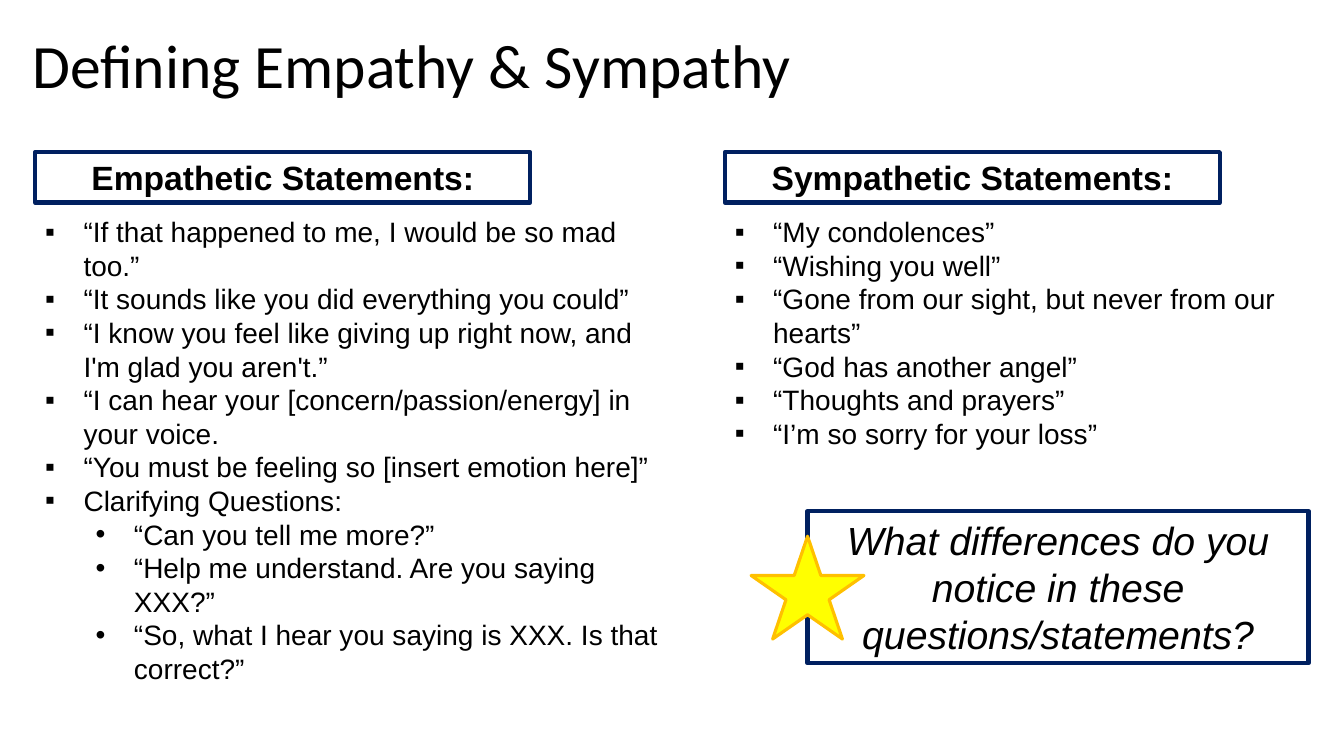
from pptx import Presentation
from pptx.dml.color import RGBColor as Rgb
from pptx.enum.shapes import MSO_SHAPE as Form
from pptx.enum.text import MSO_ANCHOR as Anchor, PP_ALIGN as Align
from pptx.util import Inches, Pt
from lxml.etree import SubElement
from pptx.oxml.ns import qn

BLACK = Rgb(0, 0, 0)
WHITE = Rgb(255, 255, 255)
NAVY = Rgb(0, 32, 96)
YELLOW = Rgb(255, 255, 0)
GOLD = Rgb(255, 192, 0)

LEFT, RIGHT = 2.63, 53.94
HEAD_TOP, LIST_TOP = 20.13, 27.73

EMPATHY = [
    (0, "“If that happened to me, I would be so mad too.”"),
    (0, "“It sounds like you did everything you could”"),
    (0, "“I know you feel like giving up right now, and I'm glad you aren't.”"),
    (0, "“I can hear your [concern/passion/energy] in your voice."),
    (0, "“You must be feeling so [insert emotion here]”"),
    (0, "Clarifying Questions:"),
    (1, "“Can you tell me more?”"),
    (1, "“Help me understand. Are you saying XXX?”"),
    (1, "“So, what I hear you saying is XXX. Is that correct?”"),
]
SYMPATHY = [
    (0, "“My condolences”"),
    (0, "“Wishing you well”"),
    (0, "“Gone from our sight, but never from our hearts”"),
    (0, "“God has another angel”"),
    (0, "“Thoughts and prayers”"),
    (0, "“I’m so sorry for your loss”"),
]


class Board:
    font = "Arial"

    def __init__(self, deck):
        self.wide, self.high = deck.slide_width, deck.slide_height
        self.shapes = deck.slides.add_slide(deck.slide_layouts[6]).shapes

    def place(self, x, y, w, h):
        return (round(self.wide * x / 100), round(self.high * y / 100),
                round(self.wide * w / 100), round(self.high * h / 100))

    def say(self, para, text, size, bold=False, slant=False, font=None):
        run = para.add_run()
        run.text = text
        face = run.font
        face.name, face.size = font or self.font, Pt(size)
        face.bold, face.italic = bold, slant
        face.color.rgb = BLACK

    def title(self, text, *area):
        box = self.shapes.add_textbox(*self.place(*area))
        box.fill.solid()
        box.fill.fore_color.rgb = WHITE
        frame = box.text_frame
        frame.word_wrap = True
        frame.vertical_anchor = Anchor.MIDDLE
        para = frame.paragraphs[0]
        para.line_spacing = 0.9
        self.say(para, text, 44, font="Calibri")

    def shape(self, form, area, line, width, fill=None):
        item = self.shapes.add_shape(form, *self.place(*area))
        item.shadow.inherit = False
        item.line.color.rgb, item.line.width = line, Pt(width)
        if fill is None:
            item.fill.background()
        else:
            item.fill.solid()
            item.fill.fore_color.rgb = fill
        return item

    def panel(self, text, *area, **style):
        frame = self.shape(Form.RECTANGLE, area, NAVY, 3).text_frame
        frame.word_wrap = True
        frame.vertical_anchor = Anchor.TOP
        para = frame.paragraphs[0]
        para.alignment = Align.CENTER
        self.say(para, text, **style)

    def star(self, *area):
        self.shape(Form.STAR_5_POINT, area, GOLD, 2.25, YELLOW)

    def bullets(self, items, *area):
        frame = self.shapes.add_textbox(*self.place(*area)).text_frame
        frame.word_wrap = True
        for spot, (level, text) in enumerate(items):
            para = frame.add_paragraph() if spot else frame.paragraphs[0]
            para.level = level
            props = para._p.get_or_add_pPr()
            props.set("marL", str(Inches(0.38 + 0.5 * level)))
            props.set("indent", str(Inches(-0.38)))
            SubElement(props, qn("a:buFont")).set("typeface", self.font)
            SubElement(props, qn("a:buChar")).set("char", "▪•"[level])
            self.say(para, text, 20)


def main():
    deck = Presentation()
    deck.slide_width, deck.slide_height = Inches(13.33), Inches(7.5)
    board = Board(deck)
    board.bullets(EMPATHY, LEFT, LIST_TOP, 47.41, 64.13)
    for x, name in ((LEFT, "Empathetic"), (RIGHT, "Sympathetic")):
        board.panel(f"{name} Statements:", x, HEAD_TOP, 36.83, 6.67, size=24, bold=True)
    board.bullets(SYMPATHY, RIGHT, LIST_TOP, 43.44, 32.8)
    board.panel("What differences do you notice in these questions/statements?",
                60.09, 67.6, 37.28, 20.13, size=28, slant=True)
    board.star(55.89, 70.93, 8.4, 13.6)
    board.title("Defining Empathy & Sympathy", 1.65, 2.4, 86.27, 13.2)
    deck.save("out.pptx")


if __name__ == "__main__":
    main()
